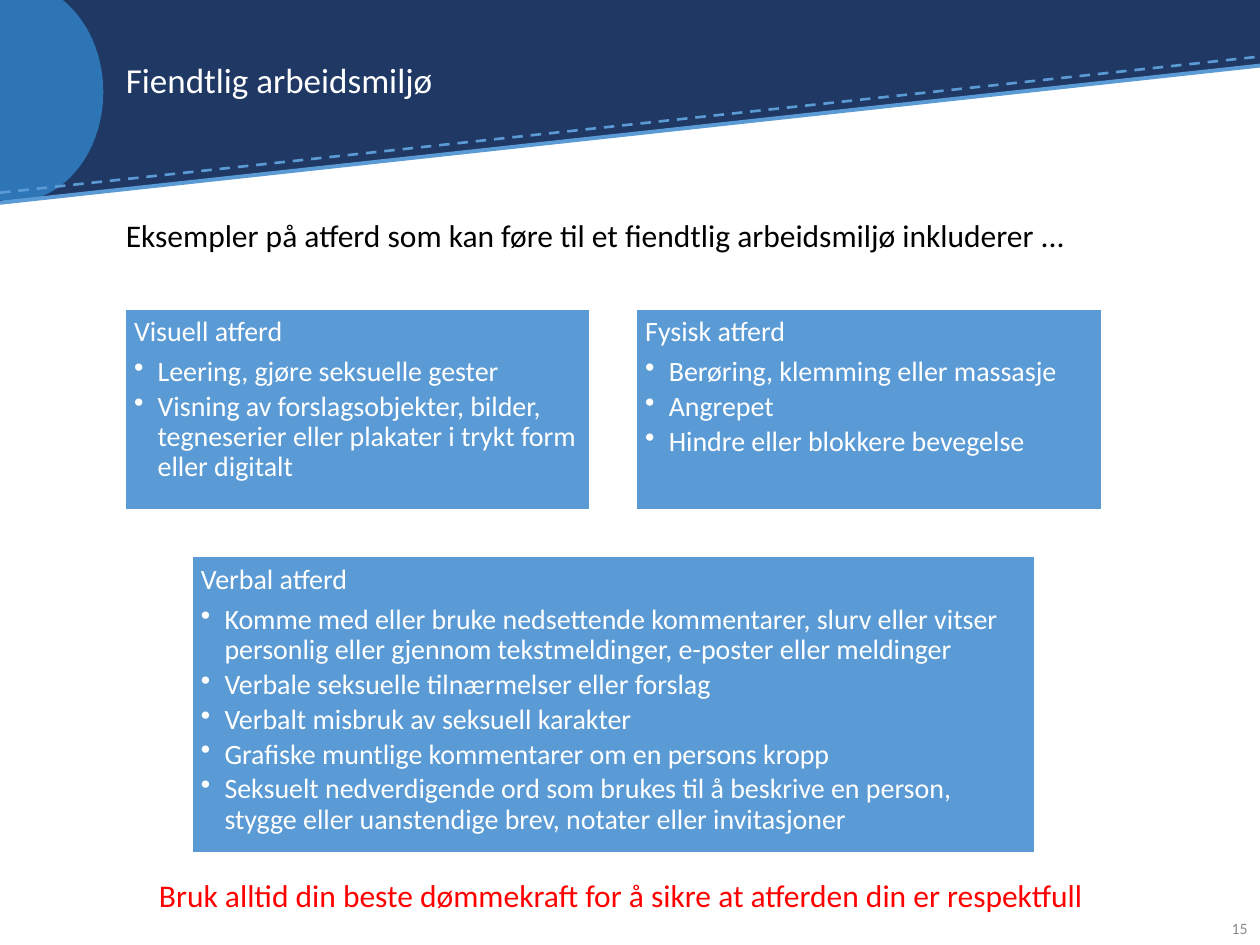
from lxml import etree
from pptx import Presentation
from pptx.dml.color import RGBColor
from pptx.enum import dml, shapes, text
from pptx.oxml import ns
from pptx.util import Pt

HUES = {
    "navy": "203864", "blue": "2E75B6", "sky": "5B9BD5", "white": "FFFFFF",
    "black": "000000", "red": "FF0000", "gray": "8C8C8C",
}
FONT = "Calibri"
KIND = shapes.MSO_SHAPE
LEFT, MID, RIGHT = text.PP_ALIGN.LEFT, text.PP_ALIGN.CENTER, text.PP_ALIGN.RIGHT


def hue(name):
    return RGBColor.from_string(HUES[name])


def style(para, size, color):
    para.font.name = FONT
    para.font.size = Pt(size)
    para.font.color.rgb = hue(color)


def solid(slide, kind, box, fill, edge=None):
    shape = slide.shapes.add_shape(kind, *map(Pt, box))
    shape.shadow.inherit = False
    shape.fill.solid()
    shape.fill.fore_color.rgb = hue(fill)
    if edge:
        shape.line.color.rgb = hue(edge)
        shape.line.width = Pt(1)
    else:
        shape.line.fill.background()
    return shape


def stroke(slide, x, y, wide, drop, width, dash=None):
    line = slide.shapes.add_connector(
        shapes.MSO_CONNECTOR.STRAIGHT, Pt(x), Pt(y), Pt(x + wide), Pt(y - drop))
    line.line.color.rgb = hue("sky")
    line.line.width = Pt(width)
    if dash:
        line.line.dash_style = dash
    etree.SubElement(line._element.spPr, ns.qn("a:effectLst"))


def label(slide, box, words, size, color, align=LEFT, middle=False):
    frame = slide.shapes.add_textbox(*map(Pt, box)).text_frame
    frame.word_wrap = True
    anchor = text.MSO_ANCHOR
    frame.vertical_anchor = anchor.MIDDLE if middle else anchor.TOP
    para = frame.paragraphs[0]
    para.text = words
    para.alignment = align
    style(para, size, color)


def banner(slide, box, title):
    x, y, wide, high = box
    band = 37.4
    solid(slide, KIND.RECTANGLE, (x, y, wide, band), "navy")
    wedge = solid(slide, KIND.RIGHT_TRIANGLE,
                  (x, y + band - 0.4, wide, high - band), "navy")
    wedge._element.spPr.xfrm.set("flipV", "1")
    solid(slide, KIND.OVAL, (x - 42.5, y - 10, 101.5, 125.2), "blue")
    stroke(slide, x, y + high - 5.4, wide, 77.8, 1.5, dml.MSO_LINE.DASH)
    stroke(slide, x, y + high + 0.4, wide, 78.4, 2.25)
    label(slide, (x + 64.8, y + 14.4, 579.6, 61.9), title, 20, "white",
          middle=True)


def card(slide, box, head, items):
    frame = solid(slide, KIND.RECTANGLE, box, "sky", "white").text_frame
    frame.word_wrap = True
    frame.vertical_anchor = text.MSO_ANCHOR.TOP
    frame.margin_left = frame.margin_right = Pt(5)
    frame.margin_top = frame.margin_bottom = Pt(5)
    for i, words in enumerate([head, *items]):
        para = frame.add_paragraph() if i else frame.paragraphs[0]
        para.text = words
        para.alignment = LEFT
        para.line_spacing = 0.9
        para.space_after = Pt(2.6 if i else 5.7)
        if i:
            props = para._p.get_or_add_pPr()
            props.set("marL", str(Pt(13.5)))
            props.set("indent", str(Pt(-13.5)))
            etree.SubElement(props, ns.qn("a:buChar"), char="•")
        style(para, 16, "white")


def cards(slide, box):
    x, y, wide, high = box
    gap, top, half = 26.4, 115.2, 265.7
    low, inset = 169.2, 38.2
    card(slide, (x, y, half, top), "Visuell atferd", [
        "Leering, gjøre seksuelle gester",
        "Visning av forslagsobjekter, bilder, tegneserier eller plakater "
        "i trykt form eller digitalt",
    ])
    card(slide, (x + wide - half, y, half, top), "Fysisk atferd", [
        "Berøring, klemming eller massasje",
        "Angrepet",
        "Hindre eller blokkere bevegelse",
    ])
    card(slide, (x + inset, y + top + gap, wide - 2 * inset, low),
         "Verbal atferd", [
        "Komme med eller bruke nedsettende kommentarer, slurv eller vitser "
        "personlig eller gjennom tekstmeldinger, e-poster eller meldinger",
        "Verbale seksuelle tilnærmelser eller forslag",
        "Verbalt misbruk av seksuell karakter",
        "Grafiske muntlige kommentarer om en persons kropp",
        "Seksuelt nedverdigende ord som brukes til å beskrive en person, "
        "stygge eller uanstendige brev, notater eller invitasjoner",
    ])


def main():
    deck = Presentation()
    deck.slide_width, deck.slide_height = Pt(720), Pt(540)
    slide = deck.slides.add_slide(deck.slide_layouts[6])
    banner(slide, (0, 0, 720, 115.5), "Fiendtlig arbeidsmiljø")
    label(slide, (681.8, 516.2, 38.2, 28.8), "15", 9, "gray", RIGHT, True)
    label(slide, (29.5, 496.8, 650.9, 50.4),
          "Bruk alltid din beste dømmekraft for å sikre at atferden din er "
          "respektfull", 18, "red", MID)
    label(slide, (64.8, 120.2, 617.8, 50.4),
          "Eksempler på atferd som kan føre til et fiendtlig arbeidsmiljø "
          "inkluderer ...", 18, "black")
    cards(slide, (71.6, 176.4, 557.8, 310.8))
    deck.save("out.pptx")


if __name__ == "__main__":
    main()
